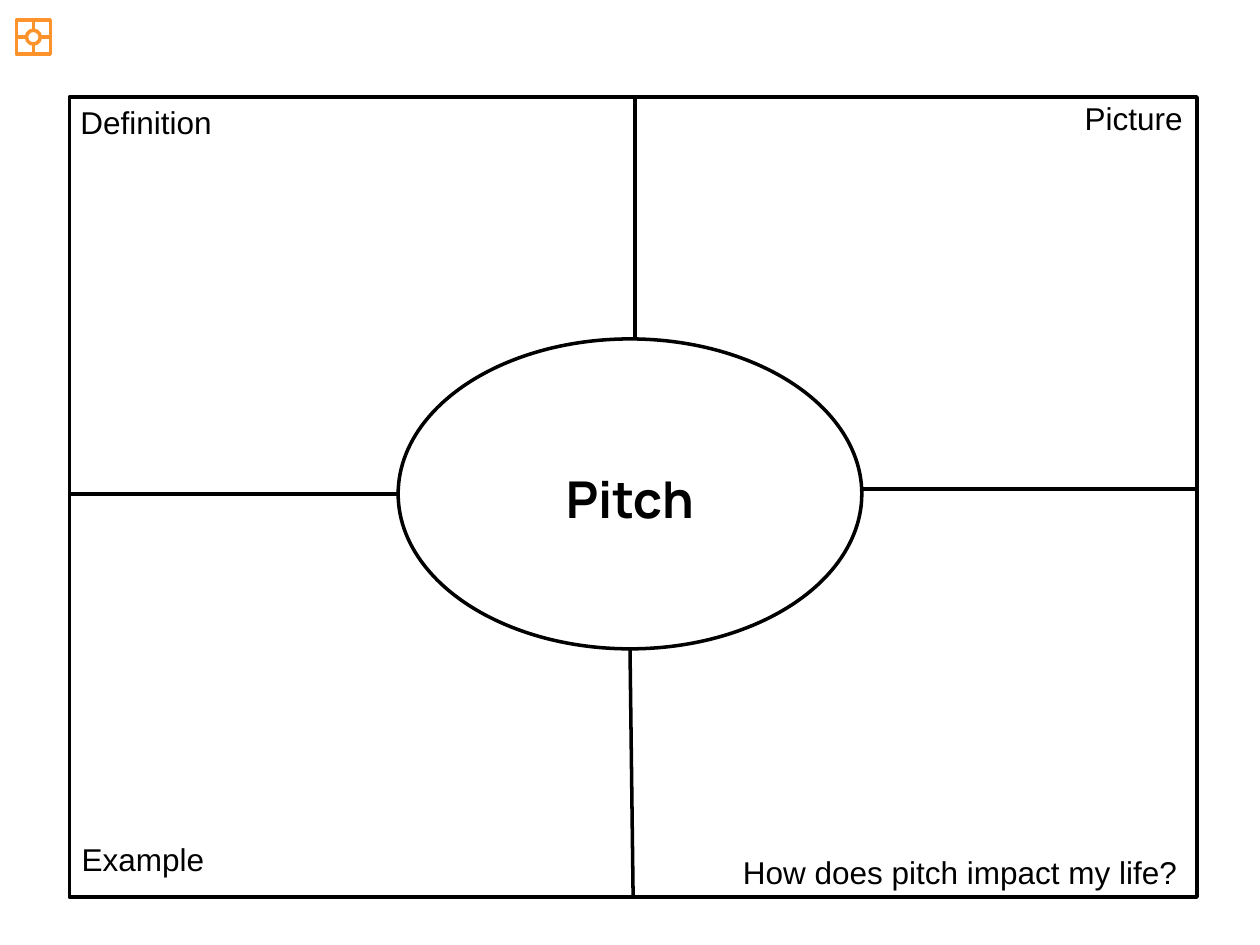
"""Build a four-square vocabulary organizer for the word Pitch."""
from dataclasses import dataclass
from typing import Optional

from lxml.etree import SubElement
from pptx import Presentation
from pptx.dml.color import RGBColor
from pptx.enum.shapes import MSO_CONNECTOR, MSO_SHAPE
from pptx.enum.text import MSO_ANCHOR, PP_ALIGN
from pptx.oxml.ns import qn
from pptx.util import Inches, Pt

BLACK, ORANGE, WHITE = "000000", "FF932B", "FFFFFF"


@dataclass
class Box:
    left: float
    top: float
    width: float
    height: float


@dataclass
class Spoke:
    start: tuple[float, float]
    end: tuple[float, float]
    site: Optional[int] = None


@dataclass
class Organizer:
    frame: Box
    oval: Box
    spokes: list[Spoke]
    color: str


@dataclass
class Label:
    text: str
    box: Box
    align: PP_ALIGN = PP_ALIGN.LEFT


ORGANIZER = Organizer(
    Box(0.55, 0.77, 8.95, 6.35),
    Box(3.16, 2.69, 3.68, 2.46),
    [
        Spoke((5.04, 2.69), (5.04, 0.77)),
        Spoke((5, 5.15), (5.02, 7.12), 2),
        Spoke((3.16, 3.92), (0.55, 3.92)),
        Spoke((6.84, 3.88), (9.5, 3.88)),
    ],
    BLACK,
)
ICON = Organizer(
    Box(0.13, 0.16, 0.27, 0.27),
    Box(0.21, 0.24, 0.11, 0.11),
    [
        Spoke((0.265, 0.24), (0.265, 0.16), 0),
        Spoke((0.265, 0.35), (0.265, 0.43), 2),
        Spoke((0.21, 0.295), (0.13, 0.295), 1),
        Spoke((0.32, 0.295), (0.4, 0.295), 3),
    ],
    ORANGE,
)
LABELS = [
    Label("Definition", Box(0.54, 0.77, 1.25, 0.4)),
    Label("Example", Box(0.55, 6.62, 1.18, 0.4)),
    Label("Picture", Box(8.51, 0.74, 1, 0.4)),
    Label("How does pitch impact my life?", Box(4.95, 6.72, 4.49, 0.4), PP_ALIGN.RIGHT),
]


def rgb(color: str) -> RGBColor:
    return RGBColor.from_string(color)


def place(box: Box) -> list[int]:
    return [Inches(v) for v in (box.left, box.top, box.width, box.height)]


def style_line(line, color: str) -> None:
    line.color.rgb = rgb(color)
    line.width = Pt(2)


def add_outline(slide, kind: MSO_SHAPE, box: Box, color: str, fill: Optional[str] = None):
    sp = slide.shapes.add_shape(kind, *place(box))
    sp.shadow.inherit = False
    if fill:
        sp.fill.solid()
        sp.fill.fore_color.rgb = rgb(fill)
    else:
        sp.fill.background()
    style_line(sp.line, color)
    return sp


def add_organizer(slide, org: Organizer) -> None:
    frame = add_outline(slide, MSO_SHAPE.RECTANGLE, org.frame, org.color)
    for spoke in org.spokes:
        ends = [Inches(v) for v in spoke.start + spoke.end]
        line = slide.shapes.add_connector(MSO_CONNECTOR.STRAIGHT, *ends)
        style_line(line.line, org.color)
        SubElement(line._element.spPr, qn("a:effectLst"))
        if spoke.site is not None:
            line.end_connect(frame, spoke.site)
    add_outline(slide, MSO_SHAPE.OVAL, org.oval, org.color, WHITE)


def write(sp, text: str, font: str, size: int, align: PP_ALIGN, bold: bool = False) -> None:
    tf = sp.text_frame
    tf.text = text
    tf.word_wrap = True
    p = tf.paragraphs[0]
    p.alignment = align
    r = p.runs[0]
    r.font.name = font
    r.font.size = Pt(size)
    r.font.bold = bold
    r.font.color.rgb = rgb(BLACK)


def add_title(slide, text: str, box: Box) -> None:
    title = slide.shapes.title
    title.left, title.top, title.width, title.height = place(box)
    write(title, text, "Manrope", 29, PP_ALIGN.CENTER, True)
    title.text_frame.vertical_anchor = MSO_ANCHOR.TOP
    slide.shapes._spTree.append(title._element)


def add_label(slide, label: Label) -> None:
    sp = slide.shapes.add_textbox(*place(label.box))
    write(sp, label.text, "Arial", 18, label.align)


def main() -> None:
    prs = Presentation()
    prs.slide_width, prs.slide_height = Inches(10), Inches(7.5)
    slide = prs.slides.add_slide(prs.slide_layouts[5])
    add_organizer(slide, ORGANIZER)
    add_title(slide, "Pitch", Box(3.27, 3.66, 3.46, 0.59))
    for label in LABELS:
        add_label(slide, label)
    add_organizer(slide, ICON)
    prs.save("out.pptx")


if __name__ == "__main__":
    main()
